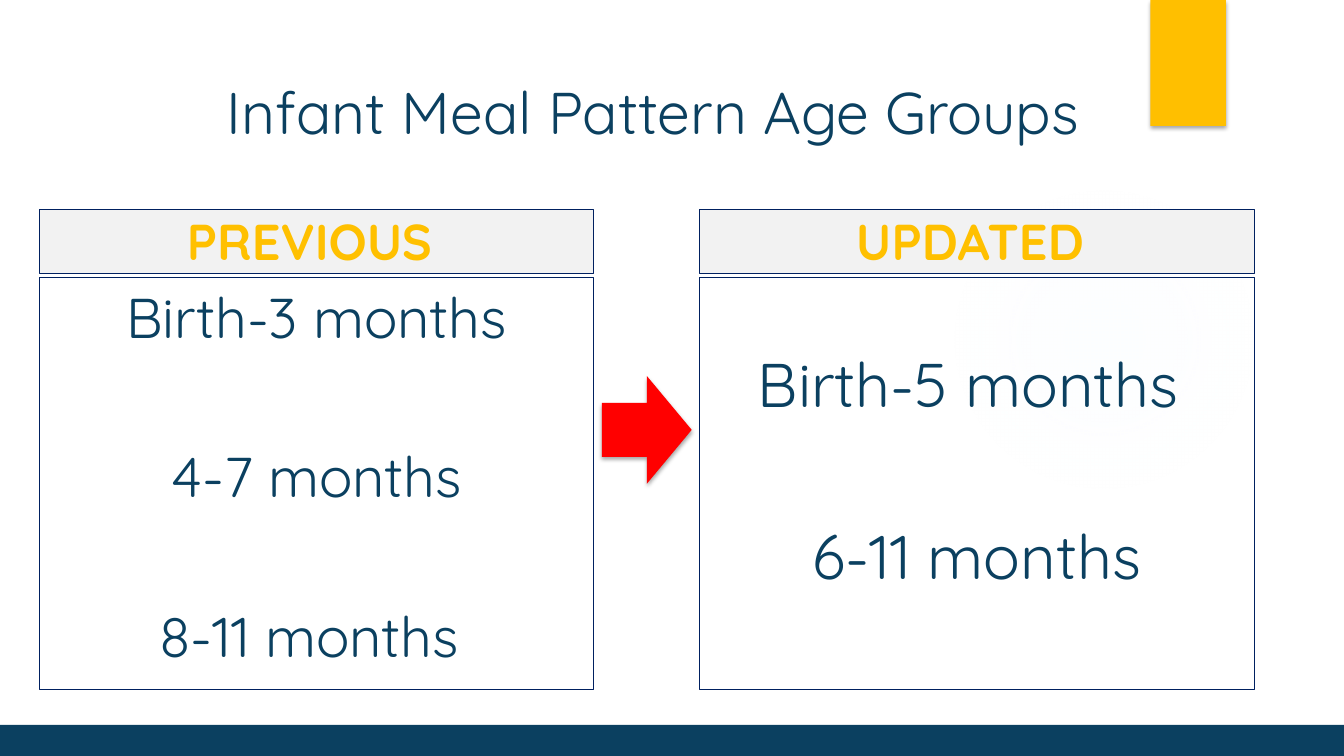
from dataclasses import dataclass

from pptx import Presentation
from pptx.dml.color import RGBColor
from pptx.enum.shapes import MSO_SHAPE as Shape
from pptx.enum.text import MSO_ANCHOR as Anchor, PP_ALIGN as Align
from pptx.oxml import parse_xml
from pptx.oxml.ns import nsdecls, qn
from pptx.util import Inches, Pt


@dataclass(frozen=True)
class Theme:
    font: str = "Quicksand"
    navy: str = "0B4060"
    outline: str = "002060"
    yellow: str = "FFBF00"
    heading: str = "FFC000"
    heading_fill: str = "F2F2F2"
    red: str = "FF0000"
    glow: str = "E4F3FC"
    title_size: int = 42
    heading_size: int = 36
    previous_size: int = 40
    updated_size: int = 44


class SlideBuilder:
    def __init__(self, slide, theme):
        self.slide = slide
        self.theme = theme

    def shape(self, kind, box, fill=None, line=None, shadow=False):
        shape = self.slide.shapes.add_shape(kind, *map(Inches, box))
        shape.shadow.inherit = False
        if fill:
            shape.fill.solid()
            shape.fill.fore_color.rgb = RGBColor.from_string(fill)
        else:
            shape.fill.background()
        if line:
            shape.line.color.rgb = RGBColor.from_string(line)
            shape.line.width = Pt(0.75)
        else:
            shape.line.fill.background()
        if shadow:
            self.add_shadow(shape)
        return shape

    def add_shadow(self, shape):
        effects = shape._element.spPr.find(qn("a:effectLst"))
        effects.append(parse_xml(
            f'<a:outerShdw {nsdecls("a")} blurRad="{Pt(3.1)}" dist="{Pt(1.8)}" '
            'dir="5400000" rotWithShape="0"><a:srgbClr val="000000">'
            '<a:alpha val="35000"/></a:srgbClr></a:outerShdw>'))

    def glow(self, box, stops):
        shape = self.shape(Shape.OVAL, box)
        stop_xml = "".join(
            f'<a:gs pos="{position * 1000}"><a:srgbClr val="{self.theme.glow}">'
            f'<a:alpha val="{alpha * 1000}"/></a:srgbClr></a:gs>'
            for position, alpha in stops)
        gradient = parse_xml(
            f'<a:gradFill {nsdecls("a")}><a:gsLst>{stop_xml}</a:gsLst>'
            '<a:path path="circle"><a:fillToRect l="50000" t="50000" '
            'r="50000" b="50000"/></a:path></a:gradFill>')
        properties = shape._element.spPr
        properties.replace(properties.find(qn("a:noFill")), gradient)

    def add_text(self, shape, lines, size, color, bold=False, anchor=Anchor.TOP,
                 top=0.05, bottom=0.05, gap=0):
        frame = shape.text_frame
        frame.word_wrap = True
        frame.vertical_anchor = anchor
        frame.margin_top, frame.margin_bottom = Inches(top), Inches(bottom)
        for index, line in enumerate(lines):
            paragraph = frame.add_paragraph() if index else frame.paragraphs[0]
            paragraph.text = line
            paragraph.alignment = Align.CENTER
            paragraph.space_before = Pt(gap if index else 0)
            font = paragraph.font
            font.name, font.size, font.bold = self.theme.font, Pt(size), bold
            font.color.rgb = RGBColor.from_string(color)

    def title(self, text, box):
        text_box = self.slide.shapes.add_textbox(*map(Inches, box))
        self.add_text(text_box, [text], self.theme.title_size, self.theme.navy)

    def age_panel(self, left, heading, ages, size, top, gap):
        theme = self.theme
        header = self.shape(Shape.RECTANGLE, (left, 2.08, 5.5, 0.63),
                            theme.heading_fill, theme.outline)
        self.add_text(header, [heading], theme.heading_size, theme.heading,
                      bold=True, anchor=Anchor.BOTTOM, top=0, bottom=0.03)
        body = self.shape(Shape.RECTANGLE, (left, 2.75, 5.5, 4.09), line=theme.outline)
        self.add_text(body, ages, size, theme.navy, top=top, gap=gap)


def main():
    theme = Theme()
    presentation = Presentation()
    presentation.slide_width, presentation.slide_height = Inches(13.33), Inches(7.5)
    slide = presentation.slides.add_slide(presentation.slide_layouts[6])
    builder = SlideBuilder(slide, theme)

    # Background decoration
    builder.glow((9.41, 1.83, 3.08, 3.08), [(0, 7), (36, 6), (69, 0), (100, 0)])
    builder.shape(Shape.RECTANGLE, (11.41, 0, 0.75, 1.25), theme.yellow, shadow=True)
    builder.shape(Shape.RECTANGLE, (0, 7.19, 13.33, 0.31), theme.navy)

    # Title
    builder.title("Infant Meal Pattern Age Groups ", (1.41, 0.7, 10.29, 1.19))

    # Age groups before and after
    builder.age_panel(0.39, "PREVIOUS ",
                      ["Birth-3 months", "4-7 months", "8-11 months "],
                      theme.previous_size, top=0.05, gap=66)
    builder.age_panel(6.94, "UPDATED ", ["Birth-5 months ", "6-11 months"],
                      theme.updated_size, top=0.68, gap=70)

    # Arrow from previous to updated
    builder.shape(Shape.RIGHT_ARROW, (5.97, 3.73, 0.89, 1.07), theme.red, shadow=True)

    presentation.save("out.pptx")


if __name__ == "__main__":
    main()
